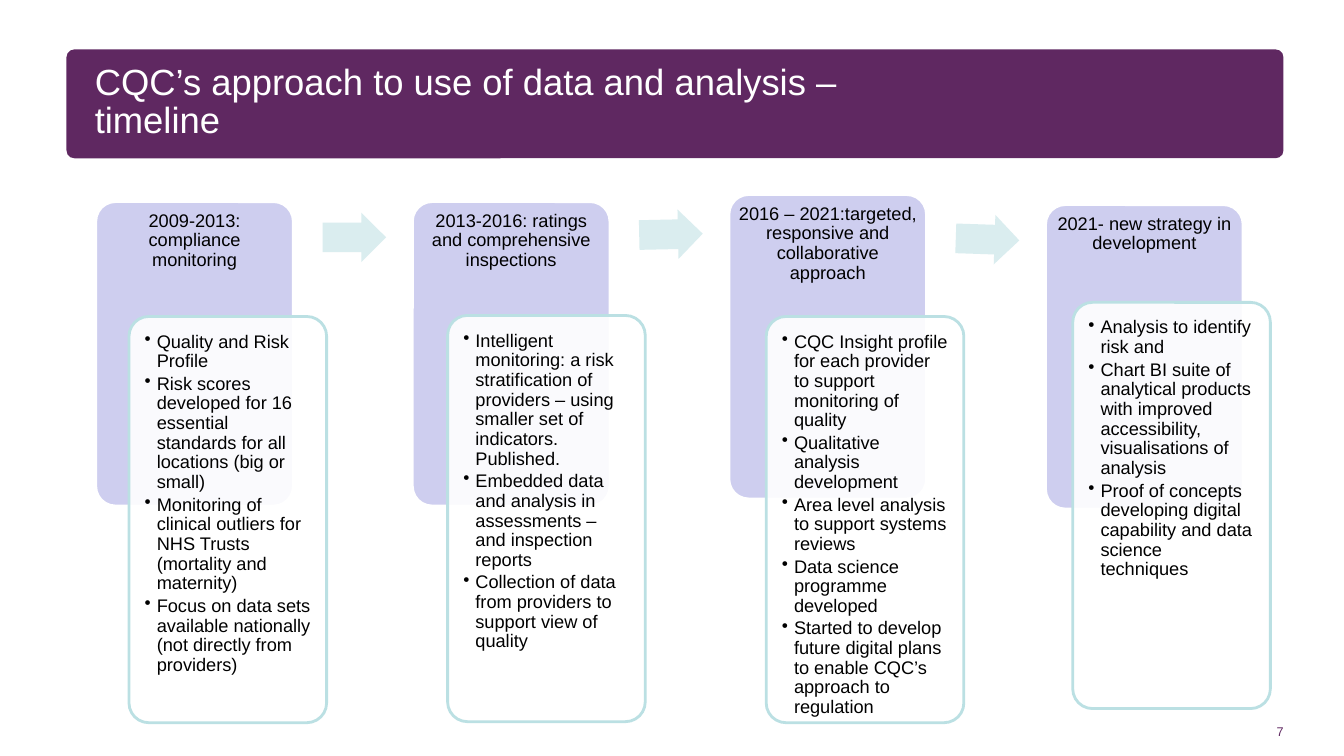
from lxml.etree import SubElement
from pptx import Presentation
from pptx.dml.color import RGBColor
from pptx.enum.shapes import MSO_SHAPE
from pptx.enum.text import MSO_ANCHOR, PP_ALIGN
from pptx.oxml.ns import qn
from pptx.util import Inches, Pt

# Content
TITLE = "CQC’s approach to use of data and analysis – timeline"
PAGE_NUMBER = "7"
STAGES = [
    {"heading": "2009-2013: compliance monitoring",
     "panel_top": 2.0, "card_at": (1.28, 3.14),
     "points": ["Quality and Risk Profile",
                "Risk scores developed for 16 essential standards for all locations (big or small)",
                "Monitoring of clinical outliers for NHS Trusts (mortality and maternity)",
                "Focus on data sets available nationally (not directly from providers)"]},
    {"heading": "2013-2016: ratings and comprehensive inspections",
     "panel_top": 2.0, "card_at": (4.44, 3.13),
     "points": ["Intelligent monitoring: a risk stratification of providers – using "
                "smaller set of indicators. Published.",
                "Embedded data and analysis in assessments – and inspection reports",
                "Collection of data from providers to support view of quality"]},
    {"heading": "2016 – 2021:targeted, responsive and collaborative approach",
     "panel_top": 1.93, "card_at": (7.6, 3.14),
     "points": ["CQC Insight profile for each provider to support monitoring of quality",
                "Qualitative analysis development",
                "Area level analysis to support systems reviews",
                "Data science programme developed",
                "Started to develop future digital plans to enable CQC’s approach to regulation"]},
    {"heading": "2021- new strategy in development",
     "panel_top": 2.03, "card_at": (10.64, 3.0),
     "points": ["Analysis to identify risk and",
                "Chart BI suite of analytical products with improved accessibility, "
                "visualisations of analysis",
                "Proof of concepts developing digital capability and data science techniques"]},
]
ARROWS = [(2.11, 0), (2.08, -1.2), (2.13, 1.9)]  # top, rotation

THEME = {
    "font": "Arial", "plum": "5F2861", "lilac": "CECEEF", "teal": "BBE0E3",
    "pale_teal": "DAEDEF", "white": "FFFFFF", "black": "000000",
    "title_size": 26, "body_size": 13, "number_size": 9,
}

# Layout
FIRST_LEFT, STAGE_PITCH, ARROW_OFFSET = 0.95, 3.14, 2.25
PANEL_SIZE, CARD_SIZE, ARROW_SIZE = (1.96, 3.02), (1.96, 4.03), (0.63, 0.49)

presentation = Presentation()
presentation.slide_width, presentation.slide_height = Inches(13.33), Inches(7.5)
slide = presentation.slides.add_slide(presentation.slide_layouts[6])


def color(name):
    return RGBColor.from_string(THEME[name])


def add_box(kind, at, size, fill, line=None, adjustments=()):
    shape = slide.shapes.add_shape(kind, *map(Inches, at + size))
    shape.shadow.inherit = False
    for index, value in enumerate(adjustments):
        shape.adjustments[index] = value
    shape.fill.solid()
    shape.fill.fore_color.rgb = color(fill)
    if line:
        shape.line.color.rgb = color(line)
        shape.line.width = Pt(2)
    else:
        shape.line.fill.background()
    return shape


def write(shape, texts, size, ink, insets=(0, 0, 0, 0), anchor=MSO_ANCHOR.TOP,
          align=PP_ALIGN.LEFT, line_spacing=1.0, space_after=0, bullets=False):
    frame = shape.text_frame
    frame.word_wrap = True
    frame.vertical_anchor = anchor
    (frame.margin_left, frame.margin_top,
     frame.margin_right, frame.margin_bottom) = map(Inches, insets)
    for index, text in enumerate(texts):
        paragraph = frame.add_paragraph() if index else frame.paragraphs[0]
        paragraph.text = text
        paragraph.alignment = align
        paragraph.line_spacing = line_spacing
        paragraph.space_after = Pt(space_after)
        if bullets:
            properties = paragraph._p.get_or_add_pPr()
            properties.set("marL", str(Inches(0.12)))
            properties.set("indent", str(Inches(-0.12)))
            SubElement(properties, qn("a:buChar")).set("char", "•")
        for run in paragraph.runs:
            run.font.name = THEME["font"]
            run.font.size = Pt(THEME[size])
            run.font.color.rgb = color(ink)


def add_text(at, size):
    return slide.shapes.add_textbox(*map(Inches, at + size))


# Title banner
add_box(MSO_SHAPE.ROUNDED_RECTANGLE, (0.66, 0.49), (12.07, 1.08), "plum", adjustments=[0.072])
write(add_text((0.94, 0.53), (8.13, 0.99)), [TITLE], "title_size", "white",
      anchor=MSO_ANCHOR.MIDDLE, line_spacing=0.85)

# Timeline stages
for index, stage in enumerate(STAGES):
    left = FIRST_LEFT + index * STAGE_PITCH
    panel = add_box(MSO_SHAPE.ROUNDED_RECTANGLE, (left, stage["panel_top"]), PANEL_SIZE,
                    "lilac", "white", [0.1])
    write(panel, [stage["heading"]], "body_size", "black", (0.04, 0.04, 0.04, 0.04),
          align=PP_ALIGN.CENTER, line_spacing=0.9)

    card = add_box(MSO_SHAPE.ROUNDED_RECTANGLE, stage["card_at"], CARD_SIZE,
                   "white", "teal", [0.1])
    fill_color = card.fill._xPr.find(qn("a:solidFill"))[0]
    SubElement(fill_color, qn("a:alpha")).set("val", "90000")
    write(card, stage["points"], "body_size", "black", (0.1, 0.1, 0.1, 0.1),
          line_spacing=0.9, space_after=2, bullets=True)

    # Arrow to the next stage
    if index < len(ARROWS):
        top, rotation = ARROWS[index]
        arrow = add_box(MSO_SHAPE.RIGHT_ARROW, (left + ARROW_OFFSET, top), ARROW_SIZE,
                        "pale_teal", adjustments=[0.6, 0.5])
        arrow.rotation = rotation

# Page number
write(add_text((9.95, 6.83), (2.78, 0.5)), [PAGE_NUMBER], "number_size", "plum",
      anchor=MSO_ANCHOR.BOTTOM, align=PP_ALIGN.RIGHT)

presentation.save("out.pptx")
